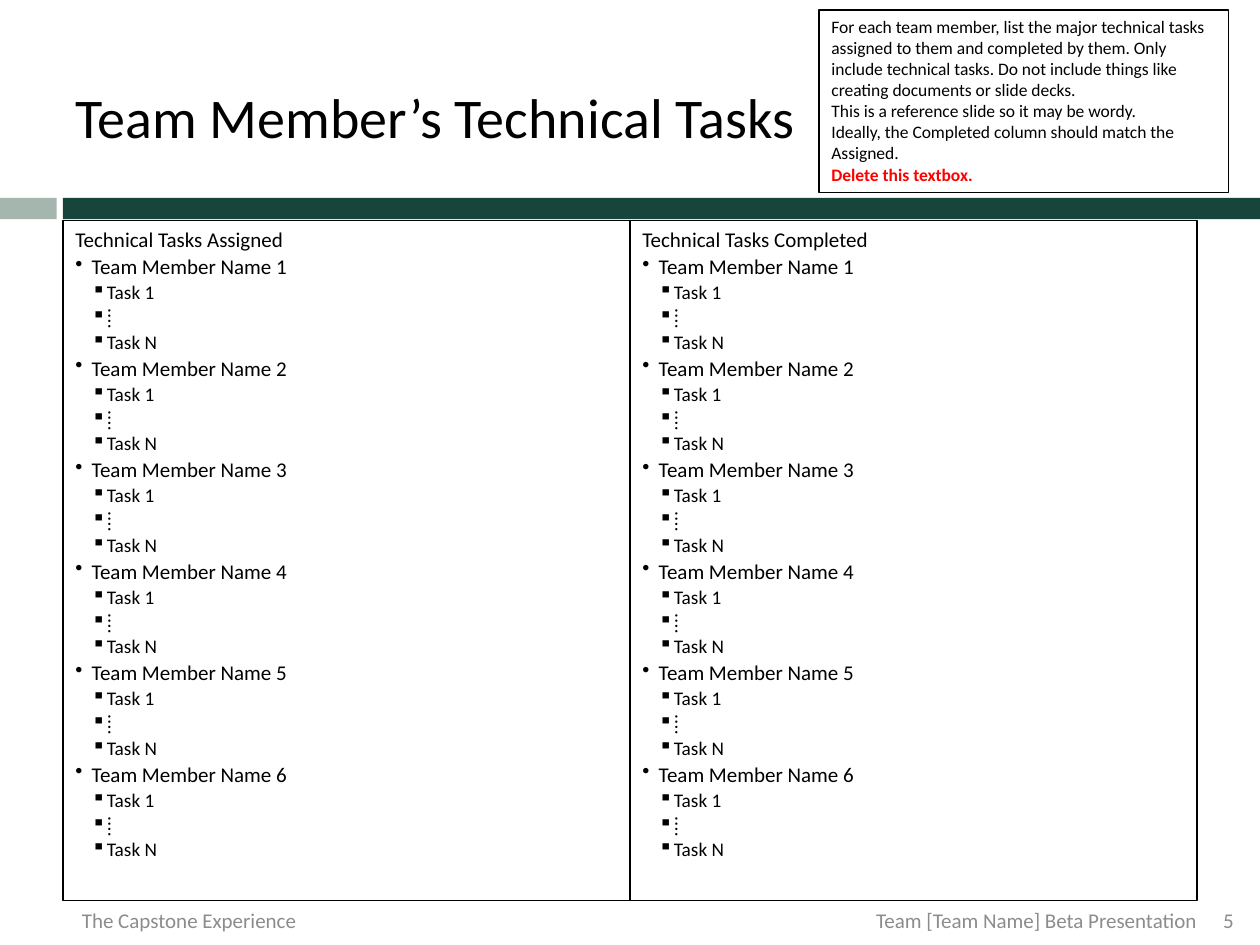
from dataclasses import dataclass

from lxml import etree
from pptx import Presentation
from pptx.dml.color import RGBColor
from pptx.enum.shapes import MSO_SHAPE
from pptx.enum.text import MSO_ANCHOR, MSO_AUTO_SIZE, PP_ALIGN
from pptx.oxml.ns import qn
from pptx.util import Inches, Pt

RECTANGLE = MSO_SHAPE.RECTANGLE
TOP, MIDDLE = MSO_ANCHOR.TOP, MSO_ANCHOR.MIDDLE
LEFT, CENTER, RIGHT = PP_ALIGN.LEFT, PP_ALIGN.CENTER, PP_ALIGN.RIGHT
FIT_SHAPE = MSO_AUTO_SIZE.SHAPE_TO_FIT_TEXT


@dataclass(frozen=True)
class Theme:
    font: str = "Calibri"
    ink: str = "000000"
    muted: str = "8C8C8C"
    alert: str = "FF0000"
    green: str = "18453B"
    sage: str = "A5B6AE"
    title_size: int = 32
    member_size: int = 12
    task_size: int = 11
    footer_size: int = 12
    note_size: int = 10
    border: float = 0.75


THEME = Theme()

TITLE = "Team Member’s Technical Tasks"
HEADINGS = ["Technical Tasks Assigned", "Technical Tasks Completed"]
MEMBERS = [f"Team Member Name {number}" for number in range(1, 7)]
TASKS = ["Task 1", "⁞", "Task N"]
NOTE = [
    "For each team member, list the major technical tasks assigned to them and "
    "completed by them. Only include technical tasks. Do not include things like "
    "creating documents or slide decks.",
    "This is a reference slide so it may be wordy.",
    "Ideally, the Completed column should match the Assigned.",
    "Delete this textbox.",
]
FOOTERS = [
    ("The Capstone Experience", 2, LEFT, 0.15, 0.1),
    ("Team [Team Name] Beta Presentation", 7, RIGHT, 0.1, 0),
    ("5", 0.5, CENTER, 0.1, 0.1),
]
BANDS = [(0.5, 9.5, THEME.green), (0, 0.45, THEME.sage)]
BULLETS = {"member": ("•", 0.13, -0.13), "task": ("▪", 0.25, -0.12)}
MARGIN, COLUMN_WIDTH = 0.5, 4.5


def style(paragraph, size, color=THEME.ink, bold=False):
    for run in paragraph.runs:
        run.font.name = THEME.font
        run.font.size = Pt(size)
        run.font.bold = bold
        run.font.color.rgb = RGBColor.from_string(color)


def add_bullet(paragraph, mark, margin, indent):
    properties = paragraph._p.get_or_add_pPr()
    properties.set("marL", str(Inches(margin)))
    properties.set("indent", str(Inches(indent)))
    etree.SubElement(properties, qn("a:buChar")).set("char", mark)


def add_band(slide, left, width, color):
    band = slide.shapes.add_shape(
        RECTANGLE, Inches(left), Inches(1.57), Inches(width), Inches(0.17))
    band.shadow.inherit = False
    band.fill.solid()
    band.fill.fore_color.rgb = RGBColor.from_string(color)
    band.line.fill.background()


def add_text(slide, text, place, size, color=THEME.ink, anchor=MIDDLE, align=LEFT):
    frame = slide.shapes.add_textbox(*map(Inches, place)).text_frame
    frame.word_wrap = True
    frame.vertical_anchor = anchor
    frame.text = text
    for paragraph in frame.paragraphs:
        paragraph.alignment = align
        style(paragraph, size, color)
    return frame


def add_panel(slide, place):
    panel = slide.shapes.add_shape(RECTANGLE, *map(Inches, place))
    panel.shadow.inherit = False
    panel.fill.background()
    panel.line.color.rgb = RGBColor.from_string(THEME.ink)
    panel.line.width = Pt(THEME.border)
    panel.text_frame.word_wrap = True
    panel.text_frame.vertical_anchor = TOP
    return panel.text_frame


def add_task_column(slide, left, heading):
    frame = add_panel(slide, (left, 1.75, COLUMN_WIDTH, 5.4))
    frame.text = heading
    frame.paragraphs[0].alignment = LEFT
    style(frame.paragraphs[0], THEME.member_size)
    for member in MEMBERS:
        entries = [("member", member)] + [("task", task) for task in TASKS]
        for kind, entry in entries:
            paragraph = frame.add_paragraph()
            paragraph.text = entry
            paragraph.alignment = LEFT
            paragraph.level = int(kind == "task")
            paragraph.space_before = Pt(1)
            add_bullet(paragraph, *BULLETS[kind])
            style(paragraph, THEME.task_size if kind == "task" else THEME.member_size)


def add_footers(slide):
    left = MARGIN
    for text, width, align, inset_left, inset_right in FOOTERS:
        frame = add_text(slide, text, (left, 7.1, width, 0.4),
                         THEME.footer_size, THEME.muted, align=align)
        frame.margin_left = Inches(inset_left)
        frame.margin_right = Inches(inset_right)
        left += width


def add_note(slide):
    frame = add_panel(slide, (6.5, 0.08, 3.25, 1.45))
    frame.auto_size = FIT_SHAPE
    frame.text = "\n".join(NOTE)
    for paragraph in frame.paragraphs:
        paragraph.alignment = LEFT
        style(paragraph, THEME.note_size)
    style(frame.paragraphs[-1], THEME.note_size, THEME.alert, bold=True)


def main():
    """Build the slide of technical tasks per team member."""
    deck = Presentation()
    deck.slide_width, deck.slide_height = Inches(10), Inches(7.5)
    slide = deck.slides.add_slide(deck.slide_layouts[6])
    for left, width, color in BANDS:
        add_band(slide, left, width, color)
    add_text(slide, TITLE, (MARGIN, 0.3, 9, 1.25), THEME.title_size)
    for index, heading in enumerate(HEADINGS):
        add_task_column(slide, MARGIN + index * COLUMN_WIDTH, heading)
    add_footers(slide)
    add_note(slide)
    deck.save("out.pptx")


if __name__ == "__main__":
    main()
